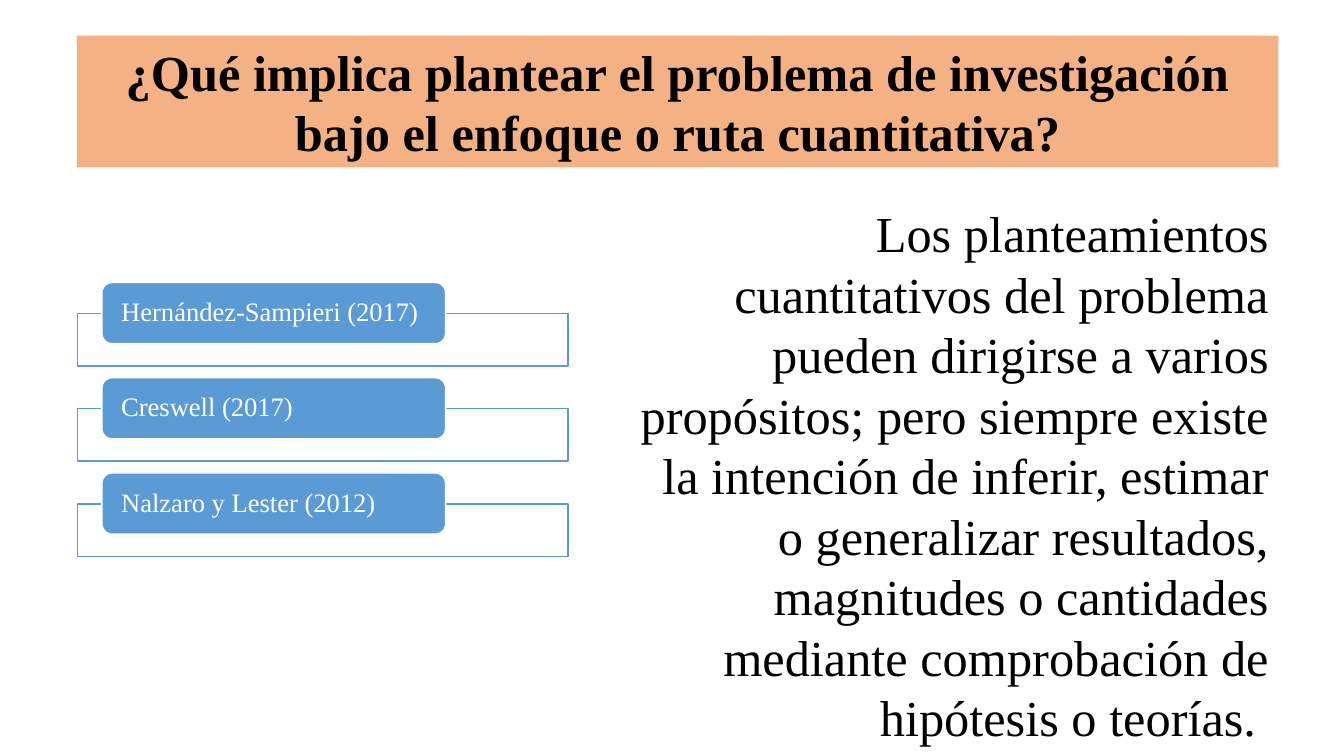
from pptx import Presentation
from pptx.dml.color import RGBColor
from pptx.enum.shapes import MSO_SHAPE
from pptx.enum.text import MSO_ANCHOR, PP_ALIGN
from pptx.util import Cm, Pt

RECTANGLE = MSO_SHAPE.RECTANGLE
ROUNDED = MSO_SHAPE.ROUNDED_RECTANGLE
MIDDLE = MSO_ANCHOR.MIDDLE
LEFT, CENTER, RIGHT = PP_ALIGN.LEFT, PP_ALIGN.CENTER, PP_ALIGN.RIGHT

FONT = "Times New Roman"
BLACK = RGBColor(0x00, 0x00, 0x00)
WHITE = RGBColor(0xFF, 0xFF, 0xFF)
ORANGE = RGBColor(0xF4, 0xB1, 0x83)
BLUE = RGBColor(0x5B, 0x9B, 0xD5)

TITLE_LINES = [
    "¿Qué implica plantear el problema de investigación",
    "bajo el enfoque o ruta cuantitativa?",
]
AUTHORS = ["Hernández-Sampieri (2017)", "Creswell (2017)", "Nalzaro y Lester (2012)"]
BODY = (
    "Los planteamientos cuantitativos del problema pueden dirigirse a varios "
    "propósitos; pero siempre existe la intención de inferir, estimar o generalizar "
    "resultados, magnitudes o cantidades mediante comprobación de hipótesis o teorías. "
)


def add_box(kind, left, top, width, height, fill, line=None):
    shape = slide.shapes.add_shape(kind, Cm(left), Cm(top), Cm(width), Cm(height))
    shape.shadow.inherit = False
    shape.fill.solid()
    shape.fill.fore_color.rgb = fill
    if line is None:
        shape.line.fill.background()
    else:
        shape.line.color.rgb = line
        shape.line.width = Pt(1)
    return shape


def write(shape, lines, size, color, alignment, spacing, bold=False):
    shape.text_frame.word_wrap = True
    paragraph = shape.text_frame.paragraphs[0]
    paragraph.alignment = alignment
    paragraph.line_spacing = spacing
    for index, line in enumerate(lines):
        if index:
            paragraph.add_line_break()
        run = paragraph.add_run()
        run.text = line
        run.font.name = FONT
        run.font.size = Pt(size)
        run.font.bold = bold
        run.font.color.rgb = color


presentation = Presentation()
presentation.slide_width = Cm(33.87)
presentation.slide_height = Cm(19.05)
slide = presentation.slides.add_slide(presentation.slide_layouts[6])

title = add_box(RECTANGLE, 1.94, 0.9, 30.28, 3.32, ORANGE)
title.text_frame.vertical_anchor = MIDDLE
write(title, TITLE_LINES, 36, BLACK, CENTER, Pt(43.2), bold=True)

for index, author in enumerate(AUTHORS):
    top = 7.12 + index * 2.4
    add_box(RECTANGLE, 1.95, top + 0.78, 12.37, 1.32, WHITE, BLUE)
    label = add_box(ROUNDED, 2.57, top, 8.66, 1.54, BLUE, WHITE)
    frame = label.text_frame
    frame.vertical_anchor = MIDDLE
    frame.margin_left = frame.margin_right = Cm(0.41)
    frame.margin_top = frame.margin_bottom = Cm(0)
    write(label, [author], 19, WHITE, LEFT, 0.9)

body = slide.shapes.add_textbox(Cm(15.62), Cm(4.98), Cm(16.61), Cm(12.75))
write(body, [BODY], 36, BLACK, RIGHT, Pt(43.2))

presentation.save("out.pptx")
